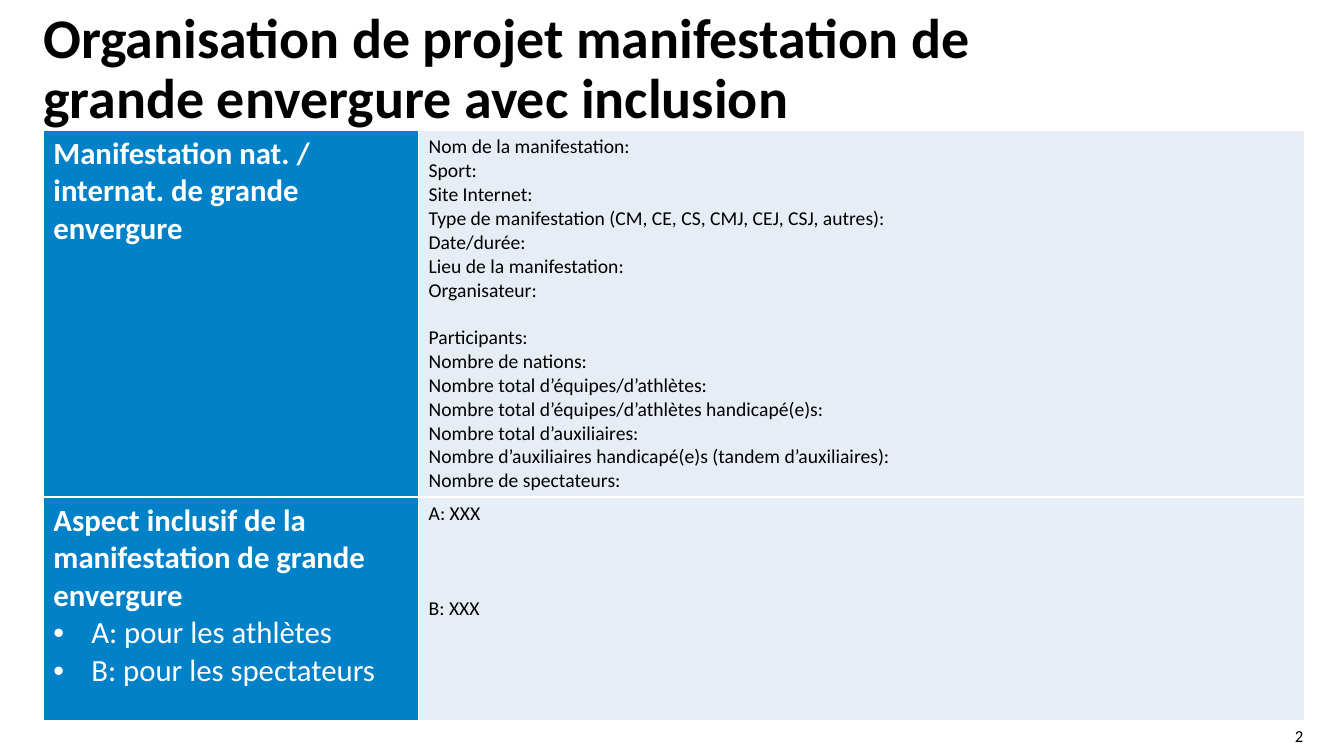
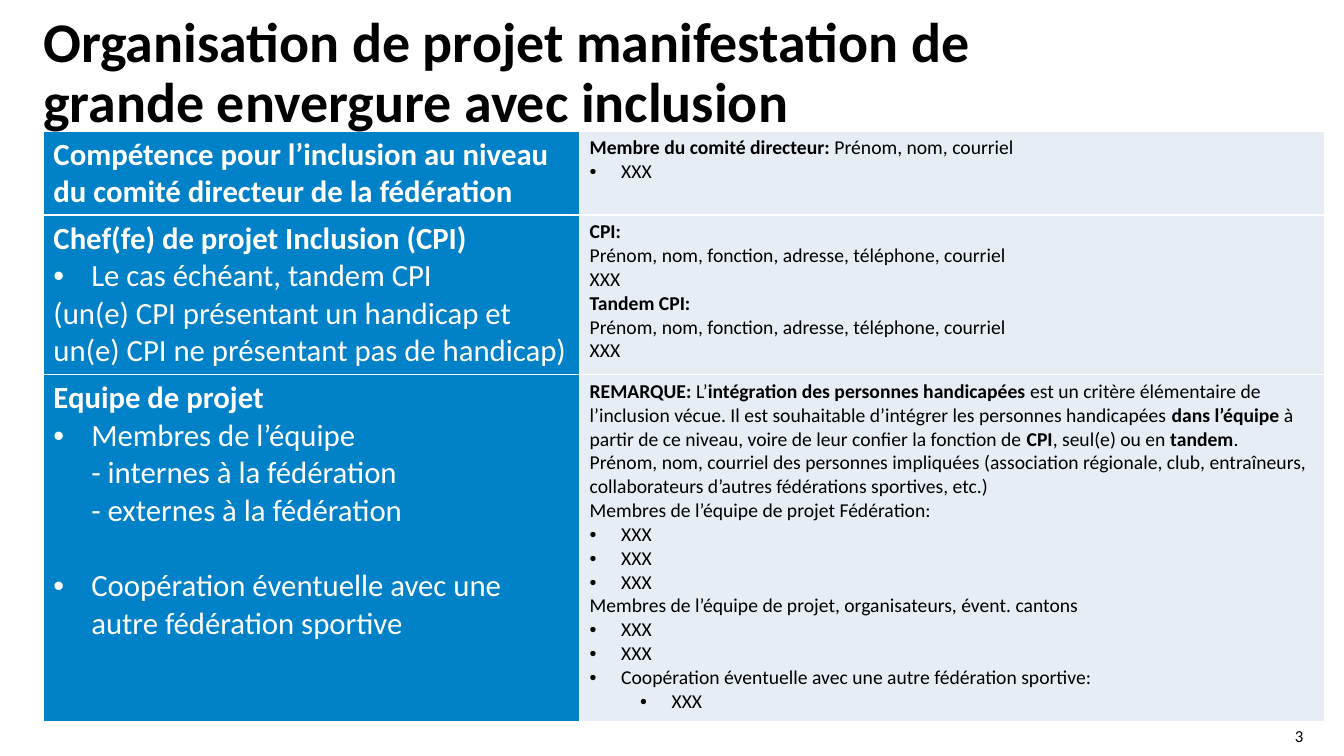
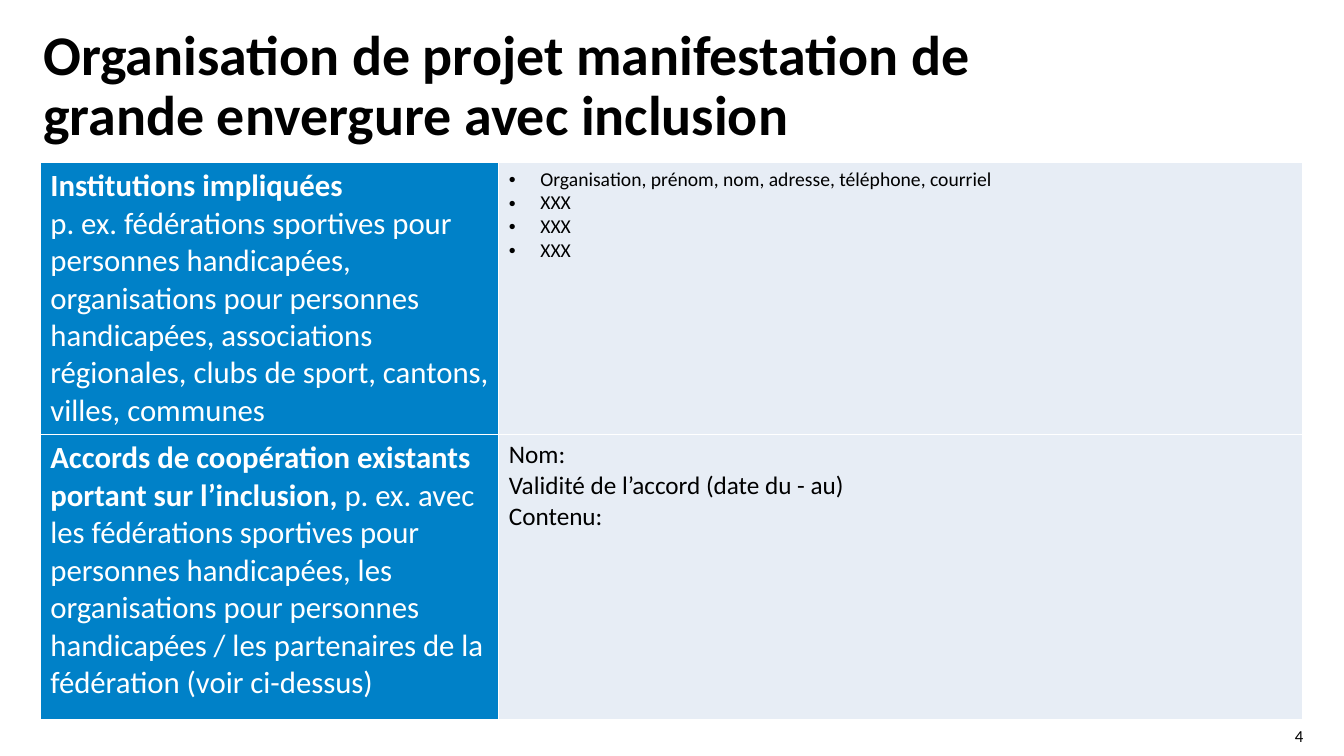
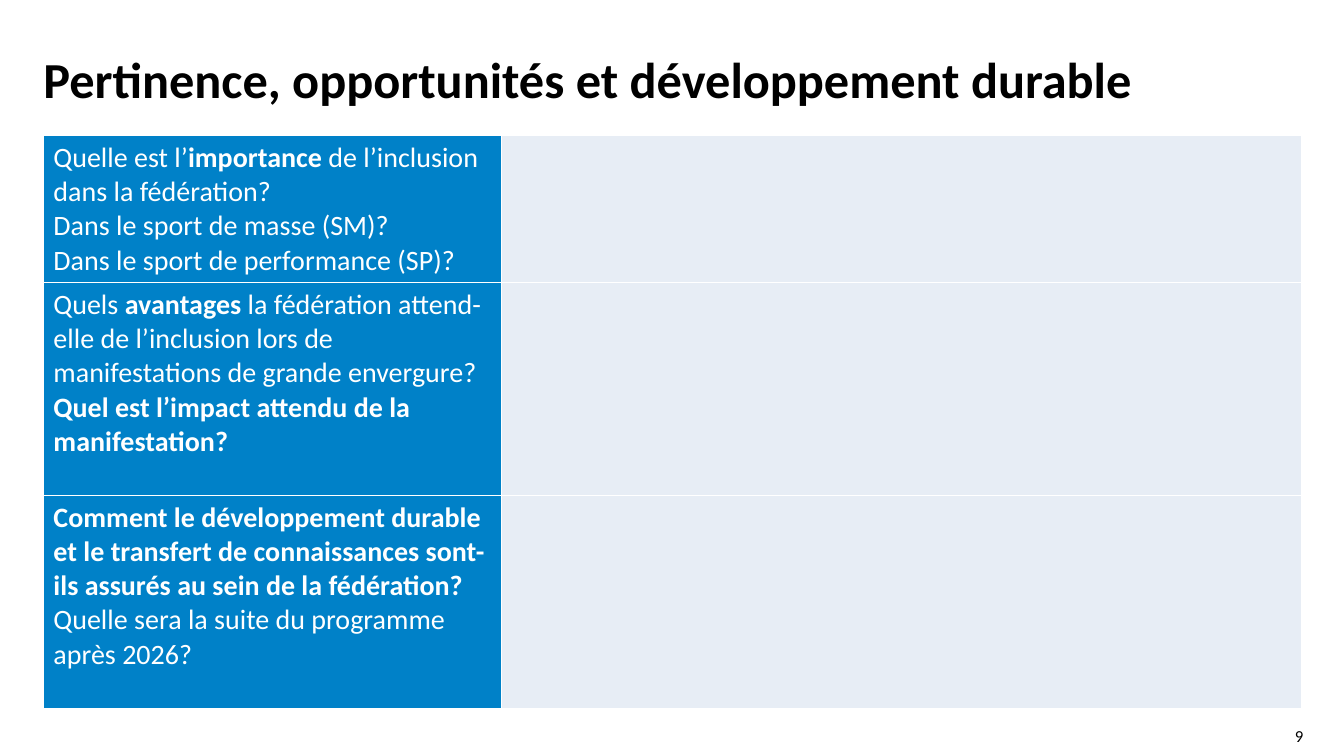
from collections import namedtuple

from lxml.etree import SubElement
from pptx import Presentation
from pptx.dml.color import RGBColor
from pptx.enum.text import MSO_ANCHOR as Anchor, PP_ALIGN as Align
from pptx.oxml import parse_xml
from pptx.oxml.ns import nsdecls, qn
from pptx.util import Pt

COLORS = {"label": "0081C8", "answer": "E7EDF5", "white": "FFFFFF", "black": "000000"}
FONT = "Calibri"
LABEL_SIZE, ANSWER_SIZE = 22, 14
LEVEL_INDENT = 36

Item = namedtuple("Item", "text level gap", defaults=(0, 0))
Row = namedtuple("Row", "height label answer answer_size", defaults=((), ANSWER_SIZE))
Page = namedtuple(
    "Page", "number title title_top table_left table_top columns rows title_size label_size",
    defaults=(40, LABEL_SIZE))


def bullet(text, level=1, gap=0):
    return Item(text, level, gap)


PROJECT_TITLE = "Organisation de projet manifestation de\ngrande envergure avec inclusion"
CONTACT = "Prénom, nom, fonction, adresse, téléphone, courriel"

PAGES = [
    Page(2, PROJECT_TITLE, 7.2, 31, 93, (268, 633), [
        Row(262, ["**Manifestation nat. / internat. de grande envergure**"], [
            "Nom de la manifestation:",
            "Sport:",
            "Site Internet:",
            "Type de manifestation (CM, CE, CS, CMJ, CEJ, CSJ, autres):",
            "Date/durée:",
            "Lieu de la manifestation:",
            "Organisateur:",
            Item("Participants:", gap=17),
            "Nombre de nations:",
            "Nombre total d’équipes/d’athlètes:",
            "Nombre total d’équipes/d’athlètes handicapé(e)s:",
            "Nombre total d’auxiliaires:",
            "Nombre d’auxiliaires handicapé(e)s (tandem d’auxiliaires):",
            "Nombre de spectateurs:",
        ]),
        Row(160, [
            "**Aspect inclusif de la manifestation de grande envergure**",
            bullet("A: pour les athlètes"),
            bullet("B: pour les spectateurs"),
        ], ["A: XXX", Item("B: XXX", gap=51)]),
    ]),
    Page(3, PROJECT_TITLE, 10, 31, 93.6, (383, 532), [
        Row(60, ["**Compétence pour l’inclusion au niveau du comité directeur de la fédération**"],
            ["**Membre du comité directeur:** Prénom, nom, courriel", bullet("XXX")]),
        Row(114, [
            "**Chef(fe) de projet Inclusion (CPI)**",
            bullet("Le cas échéant, tandem CPI"),
            "(un(e) CPI présentant un handicap et\nun(e) CPI ne présentant pas de handicap)",
        ], ["**CPI:**", CONTACT, "XXX", "**Tandem CPI:**", CONTACT, "XXX"]),
        Row(248, [
            "**Equipe de projet**",
            bullet("Membres de l’équipe\n- internes à la fédération\n- externes à la fédération"),
            bullet("Coopération éventuelle avec une autre fédération sportive", gap=27),
        ], [
            "**REMARQUE:** L’**intégration des personnes handicapées** est un critère élémentaire "
            "de l’inclusion vécue. Il est souhaitable d’intégrer les personnes handicapées "
            "**dans l’équipe** à partir de ce niveau, voire de leur confier la fonction de "
            "**CPI**, seul(e) ou en **tandem**.",
            "Prénom, nom, courriel des personnes impliquées (association régionale, club, "
            "entraîneurs, collaborateurs d’autres fédérations sportives, etc.)",
            "Membres de l’équipe de projet Fédération:",
            *[bullet("XXX")] * 3,
            "Membres de l’équipe de projet, organisateurs, évent. cantons",
            *[bullet("XXX")] * 2,
            bullet("Coopération éventuelle avec une autre fédération sportive:"),
            bullet("XXX", level=2),
        ]),
    ]),
    Page(4, PROJECT_TITLE, 19.4, 28.8, 116, (327.5, 574), [
        Row(194.5, [
            "**Institutions impliquées**",
            "p. ex. fédérations sportives pour personnes handicapées, organisations pour "
            "personnes handicapées, associations régionales, clubs de sport, cantons, villes, "
            "communes",
        ], [
            bullet("Organisation, prénom, nom, adresse, téléphone, courriel"),
            *[bullet("XXX")] * 3,
        ]),
        Row(203.5, [
            "**Accords de coopération existants portant sur l’inclusion,** p. ex. avec les "
            "fédérations sportives pour personnes handicapées, les organisations pour personnes "
            "handicapées / les partenaires de la fédération (voir ci-dessus)",
        ], ["Nom:", "Validité de l’accord (date du - au)", "Contenu:"], 18),
    ]),
    Page(9, "Pertinence, opportunités et développement durable", 39.6, 31, 96.8, (327.5, 571.5), [
        Row(105, [
            "Quelle est l’**importance** de l’inclusion dans la fédération?",
            "Dans le sport de masse (SM)?",
            "Dans le sport de performance (SP)?",
        ]),
        Row(152, [
            "Quels **avantages** la fédération attend-elle de l’inclusion lors de manifestations "
            "de grande envergure?",
            "**Quel est l’impact attendu de la manifestation?**",
        ]),
        Row(152, [
            "**Comment le développement durable et le transfert de connaissances sont-ils assurés "
            "au sein de la fédération?**",
            "Quelle sera la suite du programme après 2026?",
        ]),
    ], 36, 20),
]


def add_bullet(paragraph, level, size):
    hanging = 27 if size >= 20 else 22.5
    properties = paragraph._p.get_or_add_pPr()
    properties.set("marL", str(Pt(hanging + LEVEL_INDENT * (level - 1))))
    properties.set("indent", str(-Pt(hanging)))
    SubElement(properties, qn("a:buFont"), typeface="Arial")
    SubElement(properties, qn("a:buChar"), char="•")


def write_text(frame, items, size, color="black", align=Align.LEFT, line_spacing=None):
    for index, item in enumerate(items):
        item = Item(item) if isinstance(item, str) else item
        paragraph = frame.paragraphs[0] if index == 0 else frame.add_paragraph()
        paragraph.alignment = align
        if line_spacing:
            paragraph.line_spacing = line_spacing
        if item.gap:
            paragraph.space_before = Pt(item.gap)
        if item.level:
            add_bullet(paragraph, item.level, size)
        for part, segment in enumerate(item.text.split("**")):
            for line, text in enumerate(segment.split("\n")):
                if line:
                    paragraph.add_line_break()
                if text:
                    run = paragraph.add_run()
                    run.text = text
                    run.font.name = FONT
                    run.font.size = Pt(size)
                    run.font.bold = part % 2 == 1
                    run.font.color.rgb = RGBColor.from_string(COLORS[color])


def add_text_box(slide, left, top, width, height, items, anchor=Anchor.TOP, **text_format):
    frame = slide.shapes.add_textbox(Pt(left), Pt(top), Pt(width), Pt(height)).text_frame
    frame.word_wrap = True
    frame.vertical_anchor = anchor
    frame.margin_left = frame.margin_top = frame.margin_right = frame.margin_bottom = 0
    write_text(frame, items, **text_format)


def format_cell(cell, fill):
    cell.fill.solid()
    cell.fill.fore_color.rgb = RGBColor.from_string(COLORS[fill])
    properties = cell._tc.get_or_add_tcPr()
    for index, side in enumerate(("lnL", "lnR", "lnT", "lnB")):
        properties.insert(index, parse_xml(
            f'<a:{side} {nsdecls("a")} w="{Pt(1)}"><a:solidFill>'
            f'<a:srgbClr val="{COLORS["white"]}"/></a:solidFill></a:{side}>'))


def add_form_table(slide, page):
    height = sum(row.height for row in page.rows)
    table = slide.shapes.add_table(
        len(page.rows), len(page.columns), Pt(page.table_left), Pt(page.table_top),
        Pt(sum(page.columns)), Pt(height)).table
    table.first_row = table.horz_banding = False
    for column, width in zip(table.columns, page.columns):
        column.width = Pt(width)
    for index, row in enumerate(page.rows):
        table.rows[index].height = Pt(row.height)
        label, answer = table.cell(index, 0), table.cell(index, 1)
        format_cell(label, "label")
        format_cell(answer, "answer")
        write_text(label.text_frame, row.label, size=page.label_size, color="white")
        write_text(answer.text_frame, row.answer, size=row.answer_size)


def main():
    presentation = Presentation()
    presentation.slide_width, presentation.slide_height = Pt(960), Pt(540)
    for page in PAGES:
        slide = presentation.slides.add_slide(presentation.slide_layouts[6])
        add_text_box(slide, 897, 518.4, 34, 14.4, [str(page.number)],
                     anchor=Anchor.MIDDLE, size=12, align=Align.RIGHT)
        add_form_table(slide, page)
        title_height = 43 * (page.title.count("\n") + 1)
        title = "\n".join(f"**{line}**" for line in page.title.split("\n"))
        add_text_box(slide, 31, page.title_top, 800, title_height, [title],
                     size=page.title_size, line_spacing=0.9)
    presentation.save("out.pptx")


if __name__ == "__main__":
    main()
